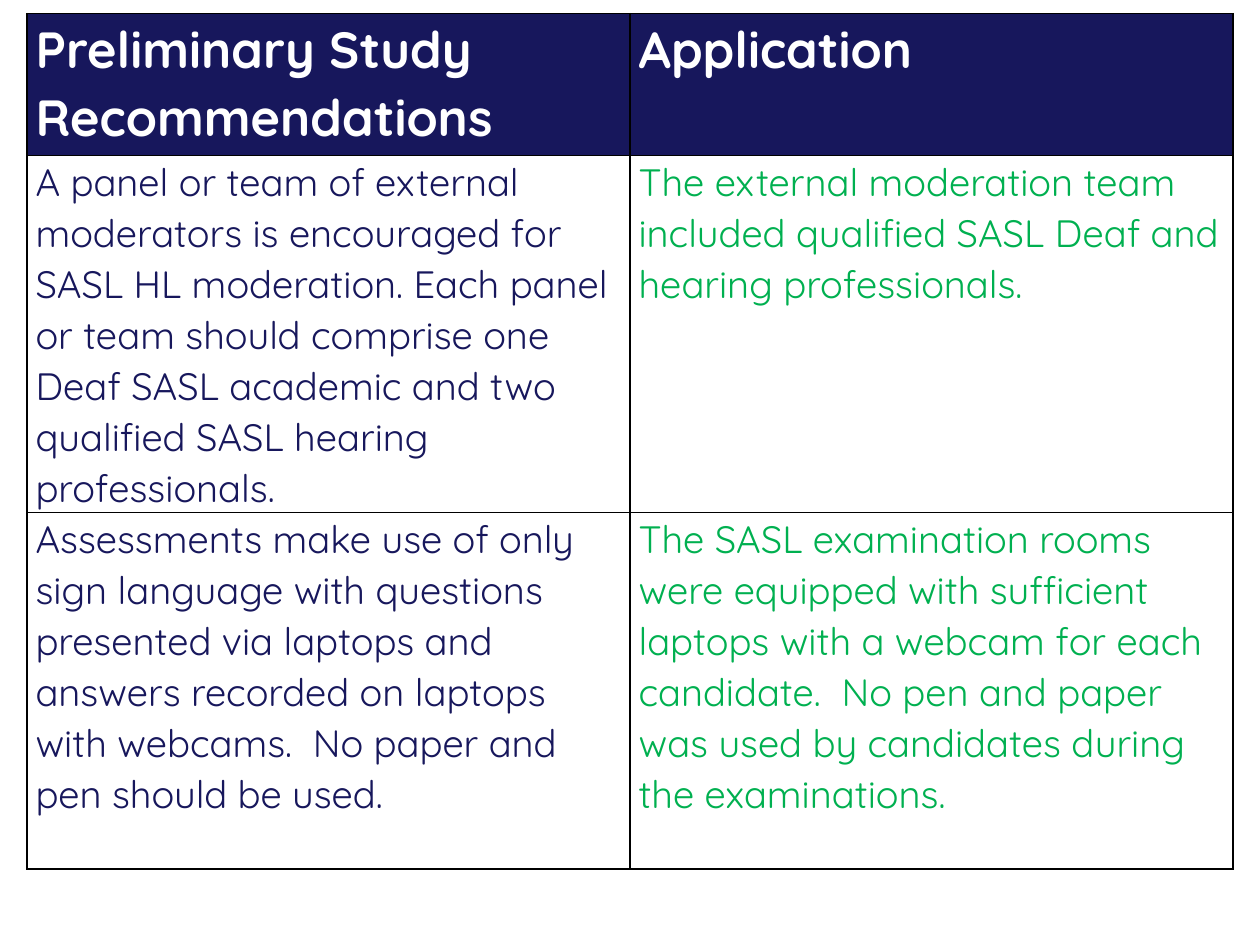
from lxml import etree
from pptx import Presentation
from pptx import util as u
from pptx.dml.color import RGBColor
from pptx.oxml.ns import qn

NAVY, GREEN, WHITE, BLACK = "17175C", "00B050", "FFFFFF", "000000"

HEADS = ["Preliminary Study Recommendations", "Application"]
ROWS = [
    ["A panel or team of external moderators is encouraged for SASL HL "
     "moderation. Each panel or team should comprise one Deaf SASL academic "
     "and two qualified SASL hearing professionals.",
     "The external moderation team included qualified SASL Deaf and hearing "
     "professionals."],
    ["Assessments make use of only sign language with questions presented via "
     "laptops and answers recorded on laptops with webcams.  No paper and pen "
     "should be used.",
     "The SASL examination rooms were equipped with sufficient laptops with a "
     "webcam for each candidate.  No pen and paper was used by candidates "
     "during the examinations."],
]


def color(code):
    return RGBColor.from_string(code)


class Deck:
    """Holds the style and the current slide."""
    face = "Quicksand"
    pad = u.Cm(0.19)
    lead = 1.07

    def __init__(self, wide, high):
        self.prs = Presentation()
        self.prs.slide_width, self.prs.slide_height = u.Cm(wide), u.Cm(high)
        self.slide = self.prs.slides.add_slide(self.prs.slide_layouts[6])

    def table(self, left, top, widths, heights):
        frame = self.slide.shapes.add_table(
            len(heights), len(widths), u.Cm(left), u.Cm(top),
            u.Cm(sum(widths)), u.Cm(sum(heights)))
        grid = frame.table
        grid.first_row = grid.horz_banding = False
        for col, wide in zip(grid.columns, widths):
            col.width = u.Cm(wide)
        for row, high in zip(grid.rows, heights):
            row.height = u.Cm(high)
        return grid

    def border(self, cell):
        props = cell._tc.get_or_add_tcPr()
        for side in ("lnL", "lnR", "lnT", "lnB"):
            line = etree.SubElement(props, qn("a:" + side), w=str(u.Pt(1)))
            fill = etree.SubElement(line, qn("a:solidFill"))
            etree.SubElement(fill, qn("a:srgbClr"), val=BLACK)

    def cell(self, cell, words, size, ink, fill=None, bold=False):
        self.border(cell)
        if fill:
            cell.fill.solid()
            cell.fill.fore_color.rgb = color(fill)
        else:
            cell.fill.background()
        cell.margin_left = cell.margin_right = self.pad
        cell.margin_top = cell.margin_bottom = 0
        cell.text = words
        para = cell.text_frame.paragraphs[0]
        para.line_spacing = self.lead
        font = para.font
        font.name, font.size, font.bold = self.face, u.Pt(size), bold
        font.color.rgb = color(ink)


def main():
    deck = Deck(28, 21)
    grid = deck.table(0.6, 0.3, [13.4] * 2, [3.15, 7.93, 7.93])
    for c, head in enumerate(HEADS):
        deck.cell(grid.cell(0, c), head, 32, WHITE, NAVY, True)
    for r, row in enumerate(ROWS, 1):
        for c, (words, ink) in enumerate(zip(row, (NAVY, GREEN))):
            deck.cell(grid.cell(r, c), words, 24, ink)
    deck.prs.save("out.pptx")


if __name__ == "__main__":
    main()
